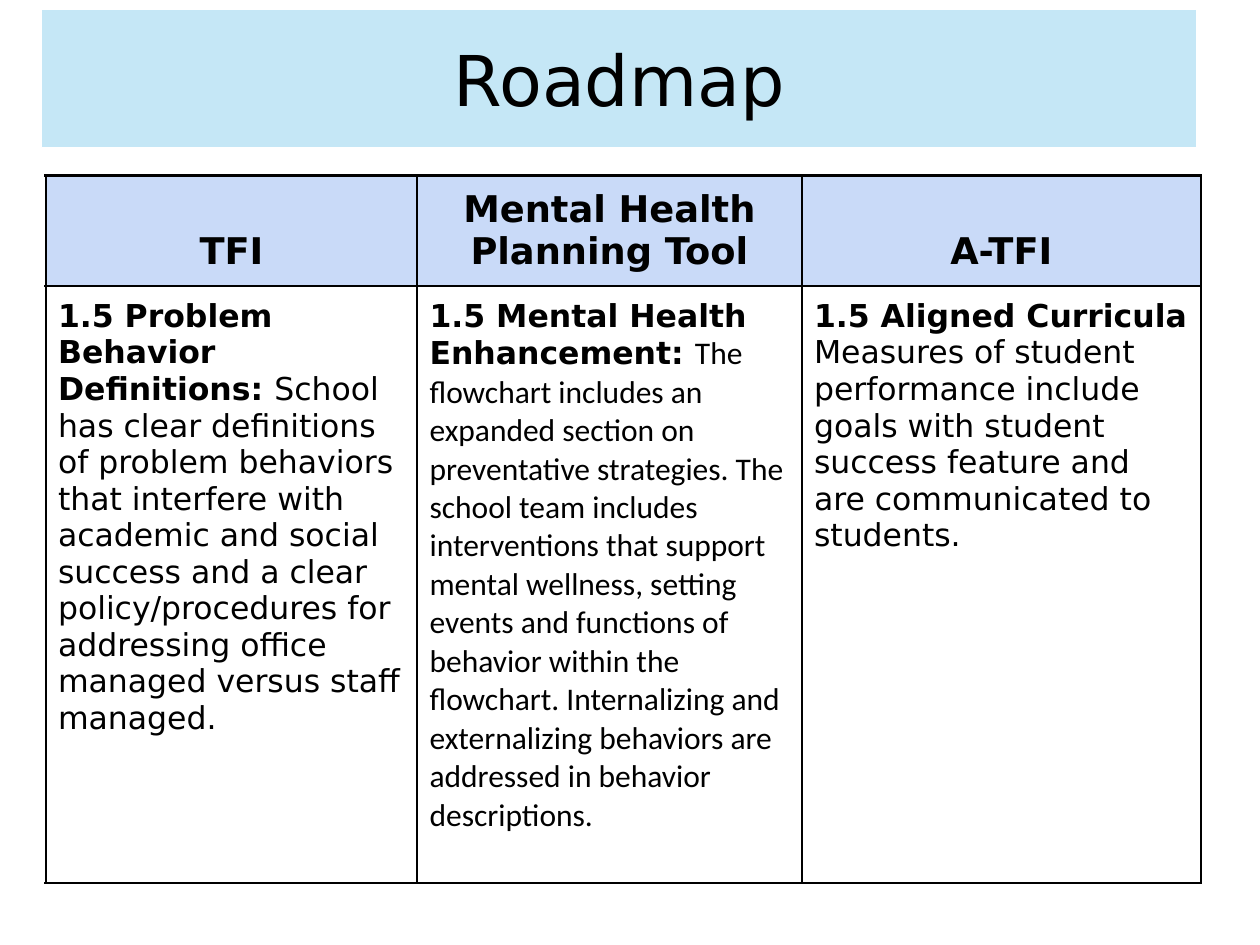
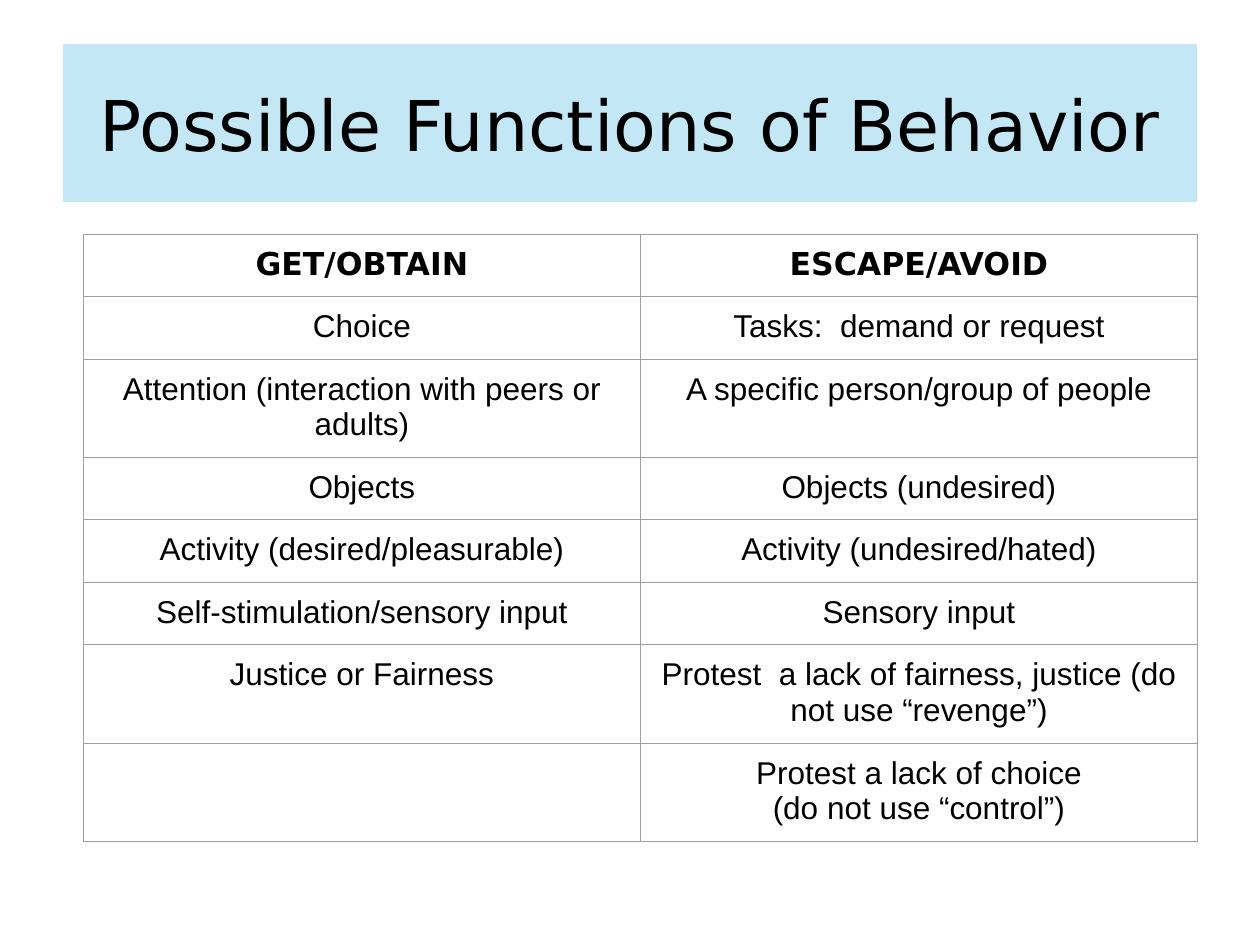
from lxml.etree import SubElement
from pptx import Presentation
from pptx.dml.color import RGBColor
from pptx.enum.text import MSO_ANCHOR, MSO_AUTO_SIZE, PP_ALIGN
from pptx.oxml.ns import qn
from pptx.util import Cm, Pt

COLORS = {
    "text": "000000",
    "title band": "A9DCF2",
    "band edge": "FFFFFF",
    "header": "C9DAF8",
    "roadmap grid": "000000",
    "functions grid": "9E9E9E",
}
TITLE_FONT = {"name": "DejaVu Sans", "size": Pt(40), "bold": False}
HEADER_FONT = {"name": "DejaVu Sans", "size": Pt(21), "bold": True}
LEAD_FONT = {**HEADER_FONT, "size": Pt(18)}
BODY_FONT = {**LEAD_FONT, "bold": False}
CALIBRI_FONT = {**BODY_FONT, "name": "Calibri"}
ARIAL_FONT = {**BODY_FONT, "name": "Arial"}

BAND_FORMAT = {
    "word_wrap": True, "auto_size": MSO_AUTO_SIZE.NONE,
    "vertical_anchor": MSO_ANCHOR.MIDDLE,
    "margin_left": Cm(0.25), "margin_right": Cm(0.25),
    "margin_top": Cm(0.13), "margin_bottom": Cm(0.13),
}
CELL_MARGINS = {f"margin_{side}": Cm(0.25) for side in ("left", "right", "top", "bottom")}
PLAIN_TABLE = {"first_row": False, "horz_banding": False}

# Each body cell is a list of paragraphs, each paragraph a list of (text, font) runs
ROADMAP = {
    "TFI": [[
        ("1.5 Problem Behavior Definitions: ", LEAD_FONT),
        ("School has clear definitions of problem behaviors that interfere with academic "
         "and social success and a clear policy/procedures for addressing office managed "
         "versus staff managed.", BODY_FONT),
    ]],
    "Mental Health Planning Tool": [[
        ("1.5 Mental Health Enhancement: ", LEAD_FONT),
        ("The flowchart includes an expanded section on preventative strategies. "
         "The school team includes interventions that support mental wellness, setting "
         "events and functions of behavior within the flowchart. Internalizing and "
         "externalizing behaviors are addressed in behavior descriptions.", CALIBRI_FONT),
    ]],
    "A-TFI": [
        [("1.5 Aligned Curricula", LEAD_FONT)],
        [("Measures of student performance include goals with student success feature "
          "and are communicated to students.", BODY_FONT)],
    ],
}

# Each row: texts of both columns, then the number of lines it holds
FUNCTIONS = [
    ("GET/OBTAIN", "ESCAPE/AVOID", 1),
    ("Choice", "Tasks:  demand or request", 1),
    ("Attention (interaction with peers or adults)", "A specific person/group of people", 2),
    ("Objects", "Objects (undesired)", 1),
    ("Activity (desired/pleasurable)", "Activity (undesired/hated)", 1),
    ("Self-stimulation/sensory input", "Sensory input", 1),
    ("Justice or Fairness", "Protest  a lack of fairness, justice (do not use “revenge”)", 2),
    ("", "Protest a lack of choice\n(do not use “control”)", 2),
]


def apply(target, formats):
    for name, value in formats.items():
        setattr(target, name, value)


def color(name):
    return RGBColor.from_string(COLORS[name])


def write(text_frame, paragraphs, alignment):
    for index, runs in enumerate(paragraphs):
        paragraph = text_frame.add_paragraph() if index else text_frame.paragraphs[0]
        paragraph.alignment = alignment
        for text, font in runs:
            run = paragraph.add_run()
            run.text = text
            apply(run.font, font)
            run.font.color.rgb = color("text")


def add_title_slide(presentation, title, box, opacity, edge=None):
    """Title-only slide whose title sits on a translucent band."""
    slide = presentation.slides.add_slide(presentation.slide_layouts[5])
    band = slide.shapes.title
    apply(band, dict(zip(("left", "top", "width", "height"), map(Cm, box))))
    band.fill.solid()
    band.fill.fore_color.rgb = color("title band")
    tint = band.fill._xPr.find(qn("a:solidFill"))[0]
    SubElement(tint, qn("a:alpha"), val=str(opacity * 1000))
    if edge:
        band.line.color.rgb = color(edge)
        band.line.width = Pt(0.75)
    else:
        band.line.fill.background()
    apply(band.text_frame, BAND_FORMAT)
    write(band.text_frame, [[(title, TITLE_FONT)]], PP_ALIGN.CENTER)
    return slide


def add_grid(slide, left, top, widths, heights):
    """Plain table with the given column widths and row heights."""
    table = slide.shapes.add_table(
        len(heights), len(widths), Cm(left), Cm(top), Cm(sum(widths)), Cm(sum(heights))
    ).table
    apply(table, PLAIN_TABLE)
    for column, width in zip(table.columns, widths):
        column.width = Cm(width)
    for row, height in zip(table.rows, heights):
        row.height = Cm(height)
    return table


def fill_cell(cell, paragraphs, alignment, grid, line_width, fill=None, anchor=MSO_ANCHOR.TOP):
    apply(cell, {**CELL_MARGINS, "vertical_anchor": anchor})
    # Borders come before the fill in the cell properties
    properties = cell._tc.get_or_add_tcPr()
    for side in ("lnL", "lnR", "lnT", "lnB"):
        border = SubElement(properties, qn(f"a:{side}"), w=str(Pt(line_width)))
        solid = SubElement(border, qn("a:solidFill"))
        SubElement(solid, qn("a:srgbClr"), val=COLORS[grid])
    if fill:
        cell.fill.solid()
        cell.fill.fore_color.rgb = color(fill)
    else:
        cell.fill.background()
    write(cell.text_frame, paragraphs, alignment)


def add_roadmap_table(slide, left, top):
    table = add_grid(slide, left, top, (7.49, 7.75, 8.05), (2.21, 12.04))
    for column, (heading, paragraphs) in enumerate(ROADMAP.items()):
        fill_cell(table.cell(0, column), [[(heading, HEADER_FONT)]], PP_ALIGN.CENTER,
                  "roadmap grid", 1.5, "header", MSO_ANCHOR.BOTTOM)
        fill_cell(table.cell(1, column), paragraphs, PP_ALIGN.LEFT, "roadmap grid", 1.5)


def add_functions_table(slide, left, top):
    heights = [0.54 + 0.72 * lines for *_, lines in FUNCTIONS]
    table = add_grid(slide, left, top, (11.23, 11.23), heights)
    for row, (*texts, _) in enumerate(FUNCTIONS):
        font = ARIAL_FONT if row else LEAD_FONT
        for column, text in enumerate(texts):
            paragraphs = [[(line, font)] for line in text.splitlines()]
            fill_cell(table.cell(row, column), paragraphs, PP_ALIGN.CENTER,
                      "functions grid", 0.75)


def main():
    presentation = Presentation()
    presentation.slide_width, presentation.slide_height = Cm(25.4), Cm(19.05)

    # Roadmap
    slide = add_title_slide(presentation, "Roadmap", (0.84, 0.19, 23.29, 2.79), 67, "band edge")
    add_roadmap_table(slide, 0.92, 3.54)

    # Functions of behavior
    slide = add_title_slide(presentation, "Possible Functions of Behavior",
                            (1.27, 0.89, 22.86, 3.18), 68)
    add_functions_table(slide, 1.68, 4.72)

    presentation.save("out.pptx")


if __name__ == "__main__":
    main()
